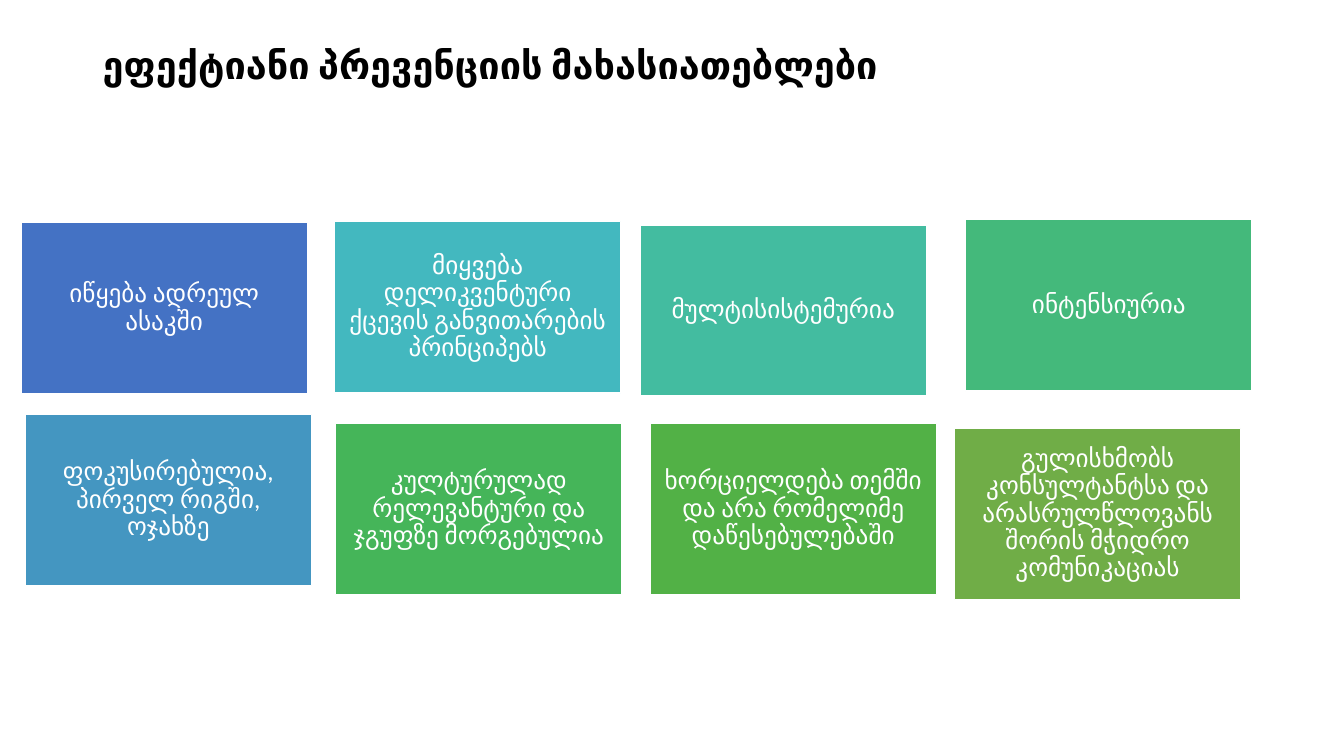
from pptx import Presentation
from pptx.dml.color import RGBColor
from pptx.enum.shapes import MSO_SHAPE
from pptx.enum.text import MSO_ANCHOR, MSO_AUTO_SIZE, PP_ALIGN
from pptx.util import Pt

COLORS = {
    "black": "000000",
    "white": "FFFFFF",
    "blue": "4472C4",
    "sky": "4496C1",
    "cyan": "43B8BF",
    "teal": "43BCA0",
    "mint": "44B97B",
    "green": "45B559",
    "grass": "52B146",
    "olive": "70AD47",
}

CARD_SIZE = (204.5, 122.4)

CARDS = [
    (15.1, 159.1, "blue", "იწყება ადრეულ ასაკში"),
    (18, 295.9, "sky", "ფოკუსირებულია, პირველ რიგში, ოჯახზე"),
    (239, 158.4, "cyan", "მიყვება დელიკვენტური ქცევის განვითარების პრინციპებს"),
    (457.2, 160.6, "teal", "მულტისისტემურია"),
    (689.8, 157, "mint", "ინტენსიურია"),
    (239.8, 302.4, "green", "კულტურულად რელევანტური და ჯგუფზე მორგებულია"),
    (464.4, 302.4, "grass", "ხორციელდება თემში და არა რომელიმე დაწესებულებაში"),
    (681.8, 306, "olive", "გულისხმობს კონსულტანტსა და არასრულწლოვანს შორის მჭიდრო კომუნიკაციას"),
]


def apply_format(target, values):
    for name, value in values.items():
        setattr(target, name, value)


class SlideBuilder:
    title_font = {"name": "Calibri", "size": Pt(27), "bold": True}
    card_font = {"name": "Calibri", "size": Pt(18), "bold": False}
    frame_format = {
        "word_wrap": True,
        "auto_size": MSO_AUTO_SIZE.NONE,
        "vertical_anchor": MSO_ANCHOR.MIDDLE,
    }
    card_margins = {
        f"margin_{side}": Pt(5) for side in ("left", "top", "right", "bottom")
    }
    title_paragraph = {"alignment": PP_ALIGN.LEFT, "line_spacing": 0.9}
    card_paragraph = {
        "alignment": PP_ALIGN.CENTER,
        "line_spacing": 0.9,
        "space_after": Pt(6.3),
    }

    def __init__(self, presentation):
        self.slide = presentation.slides.add_slide(presentation.slide_layouts[5])

    def color(self, name):
        return RGBColor.from_string(COLORS[name])

    def set_text(self, shape, text, font_format, paragraph_format, color):
        apply_format(shape.text_frame, self.frame_format)
        paragraph = shape.text_frame.paragraphs[0]
        apply_format(paragraph, paragraph_format)
        run = paragraph.add_run()
        run.text = text
        apply_format(run.font, font_format)
        run.font.color.rgb = self.color(color)

    def title(self, text, left, top, width, height):
        shape = self.slide.shapes.title
        bounds = {"left": left, "top": top, "width": width, "height": height}
        apply_format(shape, {name: Pt(value) for name, value in bounds.items()})
        self.set_text(shape, text, self.title_font, self.title_paragraph, "black")

    def card(self, left, top, color, text):
        bounds = [Pt(value) for value in (left, top, *CARD_SIZE)]
        shape = self.slide.shapes.add_shape(MSO_SHAPE.RECTANGLE, *bounds)
        shape.shadow.inherit = False
        shape.fill.solid()
        shape.fill.fore_color.rgb = self.color(color)
        shape.line.color.rgb = self.color("white")
        shape.line.width = Pt(1)
        apply_format(shape.text_frame, self.card_margins)
        self.set_text(shape, text, self.card_font, self.card_paragraph, "white")


def main():
    presentation = Presentation()
    apply_format(presentation, {"slide_width": Pt(960), "slide_height": Pt(540)})
    builder = SlideBuilder(presentation)
    builder.title("ეფექტიანი პრევენციის მახასიათებლები", 66.2, 28.8, 828, 38.2)
    for card in CARDS:
        builder.card(*card)
    presentation.save("out.pptx")


if __name__ == "__main__":
    main()
